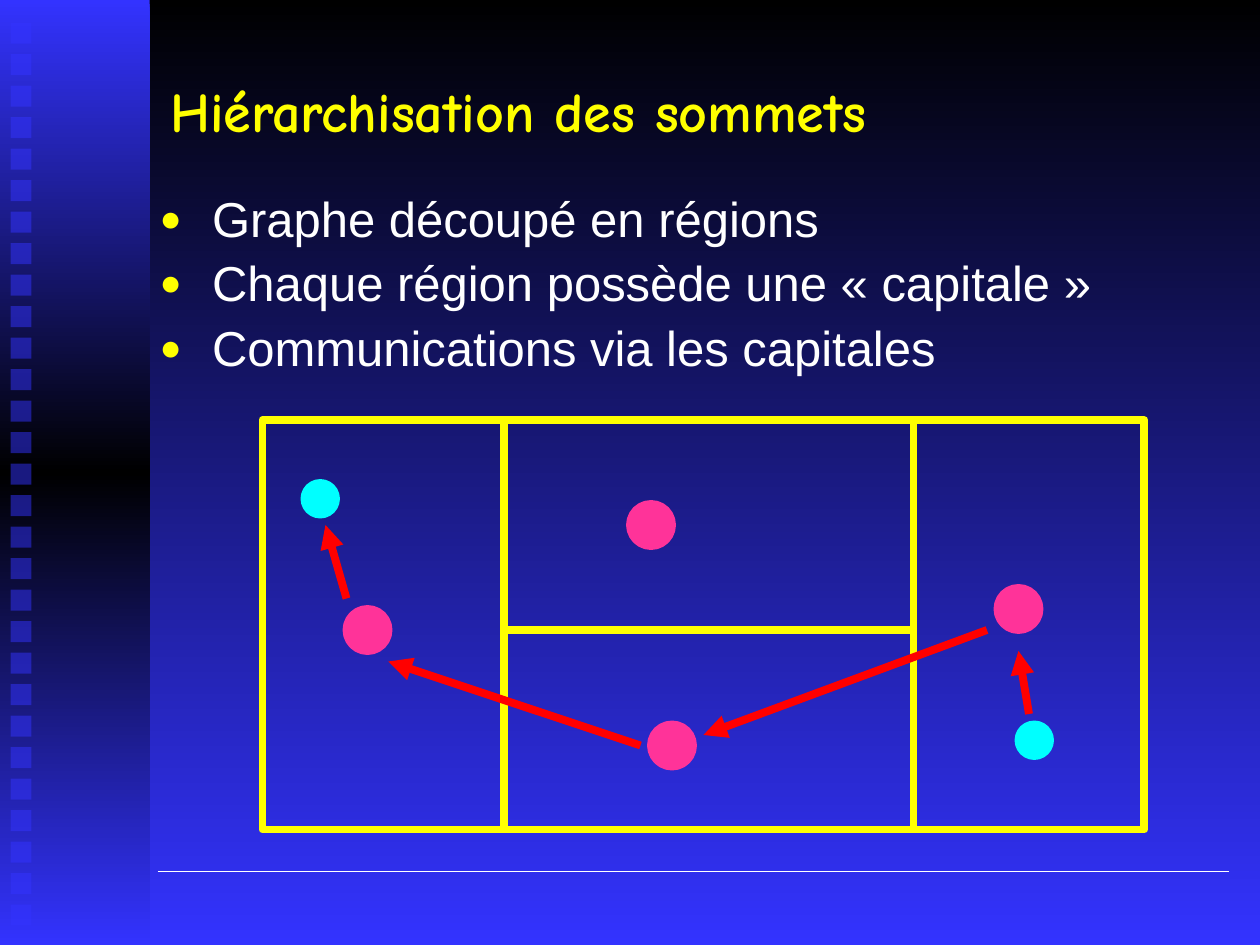
"""Builds a slide on organising graph vertices by region and capital."""
from copy import deepcopy
from dataclasses import dataclass

from lxml.etree import SubElement
from pptx import Presentation
from pptx.dml.color import RGBColor
from pptx.enum.shapes import MSO_CONNECTOR, MSO_SHAPE
from pptx.enum.text import MSO_ANCHOR, MSO_AUTO_SIZE, PP_ALIGN
from pptx.oxml.ns import qn
from pptx.util import Inches, Pt

BLACK, BLUE, WHITE, YELLOW = "000000", "3333FF", "FFFFFF", "FFFF00"
PINK, CYAN, RED = "FF3399", "00FFFF", "FF0000"
COLUMNS, ROWS = 120, 90
STROKE = 4.5


@dataclass(frozen=True)
class Area:
    column: float
    row: float
    columns: float
    rows: float


@dataclass(frozen=True)
class Vertex:
    column: float
    row: float
    size: float
    color: str


@dataclass(frozen=True)
class Segment:
    start: tuple[float, float]
    end: tuple[float, float]
    color: str = YELLOW
    width: float = STROKE
    arrow: bool = False


TITLE = "Hiérarchisation des sommets"
POINTS = (
    "Graphe découpé en régions",
    "Chaque région possède une «\u00a0capitale\u00a0»",
    "Communications via les capitales",
)
TITLE_AREA = Area(15, 3, 102, 15)
BODY_AREA = Area(14, 18, 102, 17)
SIDEBAR = Area(0, 0, 14.25, ROWS)
SQUARES = [Area(1, 2.15 + 3 * step, 2, 2) for step in range(29)]
MAP = Area(25, 40, 84, 39)
FOOTER_RULE = Segment((15, 83), (117, 83), WHITE, 1)
BORDERS = (
    Segment((48, 40), (48, 79)),
    Segment((87, 40), (87, 79)),
    Segment((48, 60), (87, 60)),
)
VERTICES = (
    Vertex(33, 58, 4, PINK),
    Vertex(62, 69, 4, PINK),
    Vertex(60, 48, 4, PINK),
    Vertex(95, 56, 4, PINK),
    Vertex(97, 69, 3, CYAN),
    Vertex(29, 46, 3, CYAN),
)
ROUTE = (
    Segment((98, 68), (97, 62), RED, arrow=True),
    Segment((94, 60), (67, 70), RED, arrow=True),
    Segment((61, 71), (37, 63), RED, arrow=True),
    Segment((33, 57), (31, 50), RED, arrow=True),
)

deck = Presentation()
deck.slide_width, deck.slide_height = Inches(10), Inches(7.5)
page = deck.slides.add_slide(deck.slide_layouts[1])


def rgb(color: str) -> RGBColor:
    """Turn a hex string into a colour."""
    return RGBColor.from_string(color)


def across(columns: float) -> int:
    """Convert grid columns to a length."""
    return round(deck.slide_width * columns / COLUMNS)


def down(rows: float) -> int:
    """Convert grid rows to a length."""
    return round(deck.slide_height * rows / ROWS)


def bounds(area: Area) -> tuple[int, int, int, int]:
    """Give left, top, width and height of an area."""
    return across(area.column), down(area.row), across(area.columns), down(area.rows)


def fill_gradient(fill, colors: tuple[str, ...]) -> None:
    """Fill from top to bottom with evenly spaced colours."""
    fill.gradient()
    fill.gradient_angle = 270
    first = fill.gradient_stops[0]._gs
    for _ in colors[2:]:
        first.addnext(deepcopy(first))
    for index, (stop, color) in enumerate(zip(fill.gradient_stops, colors)):
        stop.color.rgb = rgb(color)
        stop.position = index / (len(colors) - 1)


def add_box(area: Area, kind=MSO_SHAPE.RECTANGLE, fill: str = "", line: str = ""):
    """Draw a preset shape with an optional fill and outline."""
    box = page.shapes.add_shape(kind, *bounds(area))
    box.shadow.inherit = False
    if fill:
        box.fill.solid()
        box.fill.fore_color.rgb = rgb(fill)
    else:
        box.fill.background()
    if line:
        box.line.color.rgb = rgb(line)
        box.line.width = Pt(STROKE)
    else:
        box.line.fill.background()
    return box


def add_square(area: Area) -> None:
    """Draw a half-transparent sidebar square."""
    box = add_box(area, fill=BLUE)
    color = box.fill._xPr.find(qn("a:solidFill")).find(qn("a:srgbClr"))
    SubElement(color, qn("a:alpha"), val="50000")


def add_vertex(vertex: Vertex) -> None:
    """Draw a vertex of the graph."""
    area = Area(vertex.column, vertex.row, vertex.size, vertex.size)
    add_box(area, MSO_SHAPE.OVAL, vertex.color, vertex.color)


def add_segment(segment: Segment) -> None:
    """Draw a straight line, with an arrowhead if asked."""
    (left, top), (right, bottom) = segment.start, segment.end
    line = page.shapes.add_connector(
        MSO_CONNECTOR.STRAIGHT, across(left), down(top), across(right), down(bottom))
    line.line.color.rgb = rgb(segment.color)
    line.line.width = Pt(segment.width)
    if segment.arrow:
        SubElement(line.line._get_or_add_ln(), qn("a:tailEnd"), type="triangle")
    SubElement(line._element.spPr, qn("a:effectLst"))


def place_text(box, area: Area, anchor: MSO_ANCHOR):
    """Move a placeholder and return its text frame."""
    box.left, box.top, box.width, box.height = bounds(area)
    frame = box.text_frame
    frame.word_wrap = True
    frame.auto_size = MSO_AUTO_SIZE.NONE
    frame.vertical_anchor = anchor
    return frame


def add_span(para, text: str, font: str, size: float, color: str, bold: bool = False) -> None:
    """Add a formatted run to a left-aligned paragraph."""
    para.alignment = PP_ALIGN.LEFT
    span = para.add_run()
    span.text = text
    span.font.name, span.font.size, span.font.bold = font, Pt(size), bold
    span.font.color.rgb = rgb(color)


def add_bullet(para) -> None:
    """Give a paragraph its spacing, hanging indent and round bullet."""
    para.line_spacing = 0.9
    para.space_before = Pt(6.5)
    properties = para._p.get_or_add_pPr()
    properties.set("marL", str(across(5)))
    properties.set("indent", str(-across(5)))
    SubElement(SubElement(properties, qn("a:buClr")), qn("a:srgbClr"), val=YELLOW)
    SubElement(properties, qn("a:buSzPct"), val="75000")
    SubElement(properties, qn("a:buFont"), typeface="Arial")
    SubElement(properties, qn("a:buChar"), char="●")


fill_gradient(page.background.fill, (BLACK, BLUE))
fill_gradient(add_box(SIDEBAR).fill, (BLUE, BLACK, BLUE))
for square in SQUARES:
    add_square(square)
add_segment(FOOTER_RULE)

title = place_text(page.shapes.title, TITLE_AREA, MSO_ANCHOR.MIDDLE)
add_span(title.paragraphs[0], TITLE, "Comic Neue", 32, YELLOW, bold=True)
body = place_text(page.placeholders[1], BODY_AREA, MSO_ANCHOR.TOP)
for index, point in enumerate(POINTS):
    para = body.add_paragraph() if index else body.paragraphs[0]
    add_bullet(para)
    add_span(para, point, "Arial", 28, WHITE)

add_box(MAP, line=YELLOW)
for border in BORDERS:
    add_segment(border)
for vertex in VERTICES:
    add_vertex(vertex)
for arrow in ROUTE:
    add_segment(arrow)

deck.save("out.pptx")
